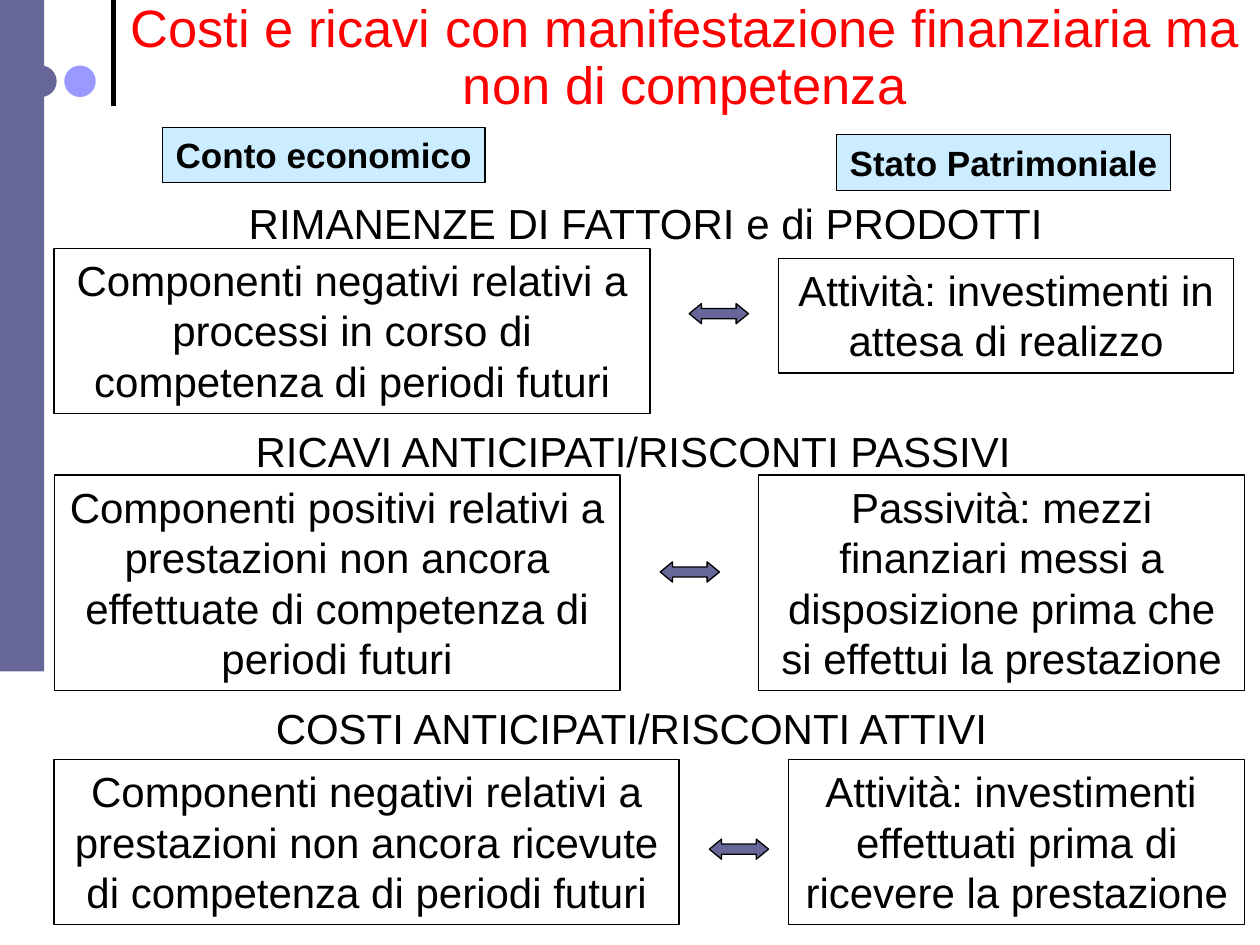
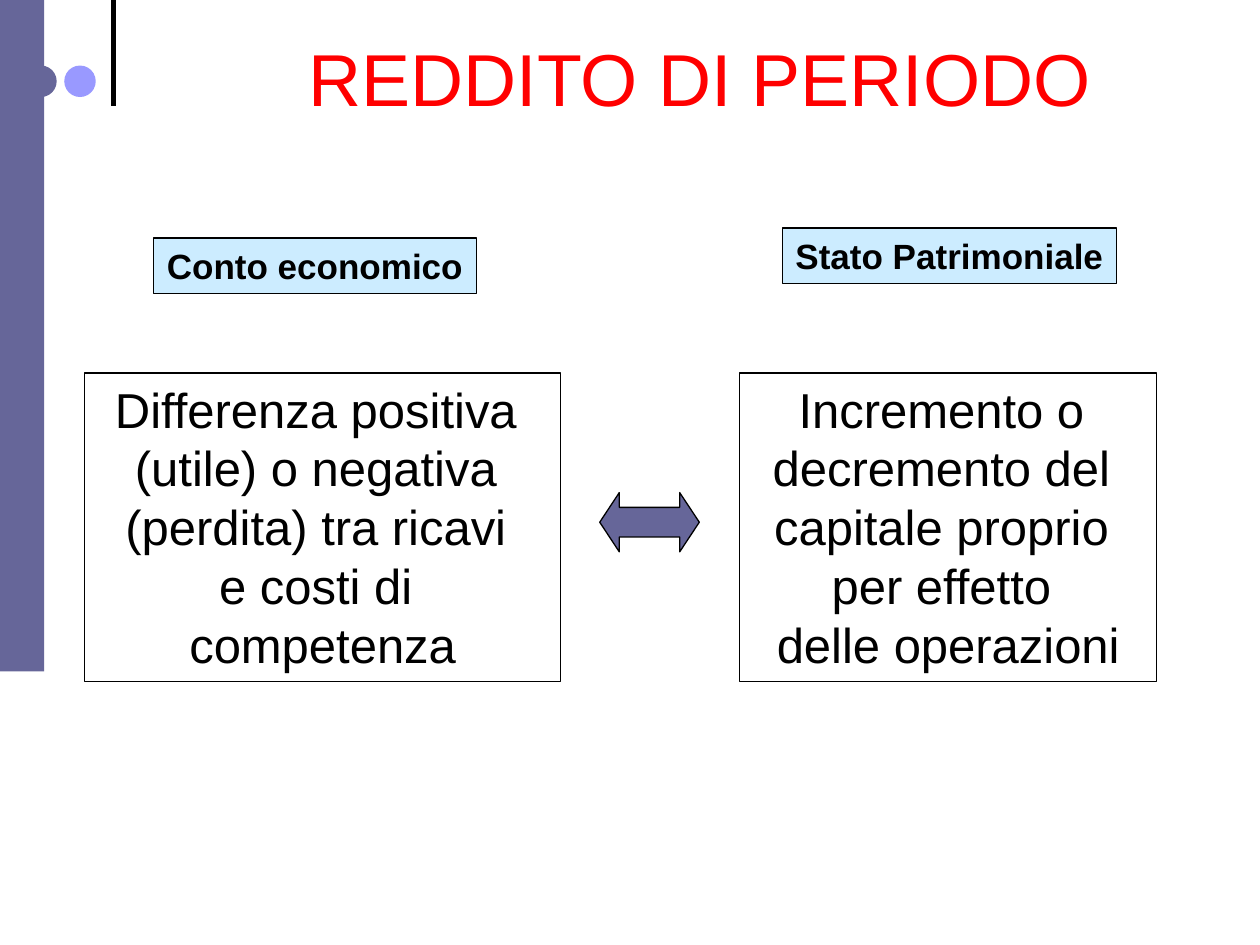
from lxml import etree
from pptx import Presentation
from pptx.dml.color import RGBColor
from pptx.enum.shapes import MSO_CONNECTOR, MSO_SHAPE
from pptx.enum.text import MSO_ANCHOR, MSO_AUTO_SIZE, PP_ALIGN
from pptx.oxml.ns import qn
from pptx.util import Inches, Pt

RECT, OVAL, ARROW = MSO_SHAPE.RECTANGLE, MSO_SHAPE.OVAL, MSO_SHAPE.LEFT_RIGHT_ARROW
STRAIGHT = MSO_CONNECTOR.STRAIGHT
LEFT, CENTER = PP_ALIGN.LEFT, PP_ALIGN.CENTER
TOP, FIT = MSO_ANCHOR.TOP, MSO_AUTO_SIZE.SHAPE_TO_FIT_TEXT

COLORS = {"band": "666699", "dot": "9999FF", "label": "CCECFF",
          "title": "FF0000", "ink": "000000"}
FONT = "Arial"

prs = Presentation()
prs.slide_width, prs.slide_height = Inches(10), Inches(7.5)
# Grid of 100 columns by 75 rows
COL, ROW = prs.slide_width / 100, prs.slide_height / 75


def add_box(s, at, kind=RECT, fill=None, line=None):
    x, y, w, h = at
    sp = s.shapes.add_shape(kind, round(x * COL), round(y * ROW),
                            round(w * COL), round(h * ROW))
    sp.shadow.inherit = False
    if fill:
        sp.fill.solid()
        sp.fill.fore_color.rgb = RGBColor.from_string(COLORS[fill])
    else:
        sp.fill.background()
    if line:
        sp.line.color.rgb = RGBColor.from_string(COLORS[line])
        sp.line.width = Pt(0.75)
    else:
        sp.line.fill.background()
    return sp


def add_text(sp, lines, size, color="ink", bold=False, align=CENTER, wrap=True, spacing=None):
    tf = sp.text_frame
    frame_format = {"word_wrap": wrap, "auto_size": FIT, "vertical_anchor": TOP}
    for name, value in frame_format.items():
        setattr(tf, name, value)
    font_format = {"name": FONT, "size": Pt(size), "bold": bold}
    for i, line in enumerate(lines):
        p = tf.paragraphs[0] if i == 0 else tf.add_paragraph()
        p.alignment, p.line_spacing = align, spacing
        r = p.add_run()
        r.text = line
        r.font.color.rgb = RGBColor.from_string(COLORS[color])
        for name, value in font_format.items():
            setattr(r.font, name, value)


# Contents: every pair is left box, right box and the arrow between them
slides = [
    {
        "title": "Costi e ricavi con manifestazione finanziaria ma non di competenza",
        "title_at": (8.3, -0.3, 92.1, 10), "title_size": 30, "title_spacing": 0.9,
        "title_inset": 0.05,
        "labels": [("Conto economico", (12.9, 10.1, 25.6, 4.4)),
                   ("Stato Patrimoniale", (66.4, 10.7, 26.5, 4.4))],
        "headings": [
            ("RIMANENZE DI FATTORI e di PRODOTTI", (18.5, 15.2, 65.5, 5), CENTER),
            ("RICAVI ANTICIPATI/RISCONTI PASSIVI", (19.3, 33.3, 63.1, 5), LEFT),
            ("COSTI ANTICIPATI/RISCONTI ATTIVI", (20.9, 55.3, 59.5, 5), LEFT),
        ],
        "text_size": 24, "arrow_size": (4.7, 1.6), "arrow_head": 0.61,
        "pairs": [
            ((4.3, 19.7, 47.3, 13.1),
             ["Componenti negativi relativi a", "processi in corso di",
              "competenza di periodi futuri"],
             (61.8, 20.5, 36.1, 9.1),
             ["Attività: investimenti in attesa di realizzo"],
             (54.7, 24.1)),
            ((4.3, 37.7, 44.9, 17.1),
             ["Componenti positivi relativi a",
              "prestazioni non ancora effettuate di competenza di periodi futuri"],
             (60.2, 37.7, 38.6, 17.1),
             ["Passività: mezzi finanziari messi a disposizione prima che "
              "si effettui la prestazione"],
             (52.4, 44.6)),
            ((4.3, 60.3, 49.6, 13.1),
             ["Componenti negativi relativi a",
              "prestazioni non ancora ricevute di competenza di periodi futuri"],
             (62.6, 60.3, 36.2, 13.1),
             ["Attività: investimenti ",
              "effettuati prima di ricevere la prestazione"],
             (56.3, 66.6)),
        ],
    },
    {
        "title": "REDDITO DI PERIODO",
        "title_at": (13.8, 1.1, 83.5, 8.4), "title_size": 42, "title_spacing": None,
        "title_inset": 0.15,
        "labels": [("Conto economico", (12.2, 18.9, 25.6, 4.4)),
                   ("Stato Patrimoniale", (62.1, 18.1, 26.5, 4.4))],
        "headings": [],
        "text_size": 28, "arrow_size": (7.9, 4.7), "arrow_head": 0.33,
        "pairs": [
            ((6.7, 29.6, 37.8, 24.5),
             ["Differenza positiva ", "(utile) o negativa ", "(perdita) tra ricavi ",
              "e costi di ", "competenza"],
             (58.7, 29.6, 33.1, 24.5),
             ["Incremento o ", "decremento del ", "capitale proprio ",
              "per effetto ", "delle operazioni"],
             (47.6, 39.1)),
        ],
    },
]

for page in slides:
    s = prs.slides.add_slide(prs.slide_layouts[6])

    # Shared decoration: rule, two dots and side band
    rule = s.shapes.add_connector(STRAIGHT, round(9 * COL), round(8.4 * ROW), round(9 * COL), 0)
    rule.line.color.rgb = RGBColor.from_string(COLORS["ink"])
    rule.line.width = Pt(3)
    etree.SubElement(rule._element.spPr, qn("a:effectLst"))
    for x, fill in ((2, "band"), (5.1, "dot")):
        add_box(s, (x, 5.2, 2.5, 2.5), OVAL, fill)
    add_box(s, (0, 0, 3.5, 53.3), RECT, "band")

    # Title
    sp = add_box(s, page["title_at"])
    add_text(sp, [page["title"]], page["title_size"], "title", spacing=page["title_spacing"])
    sp.text_frame.margin_top = Inches(page["title_inset"])

    # Section headings
    for text, at, align in page["headings"]:
        add_text(add_box(s, at), [text], page["text_size"], align=align, wrap=False)

    # Pairs of boxes with their arrows
    for left_at, left_text, right_at, right_text, arrow_at in page["pairs"]:
        for at, lines in ((left_at, left_text), (right_at, right_text)):
            add_text(add_box(s, at, line="ink"), lines, page["text_size"])
        arrow = add_box(s, arrow_at + page["arrow_size"], ARROW, "band", "ink")
        arrow.adjustments[0] = 0.5
        arrow.adjustments[1] = page["arrow_head"]

    # Column labels
    for text, at in page["labels"]:
        add_text(add_box(s, at, RECT, "label", "ink"), [text], 20, bold=True, wrap=False)

prs.save("out.pptx")
